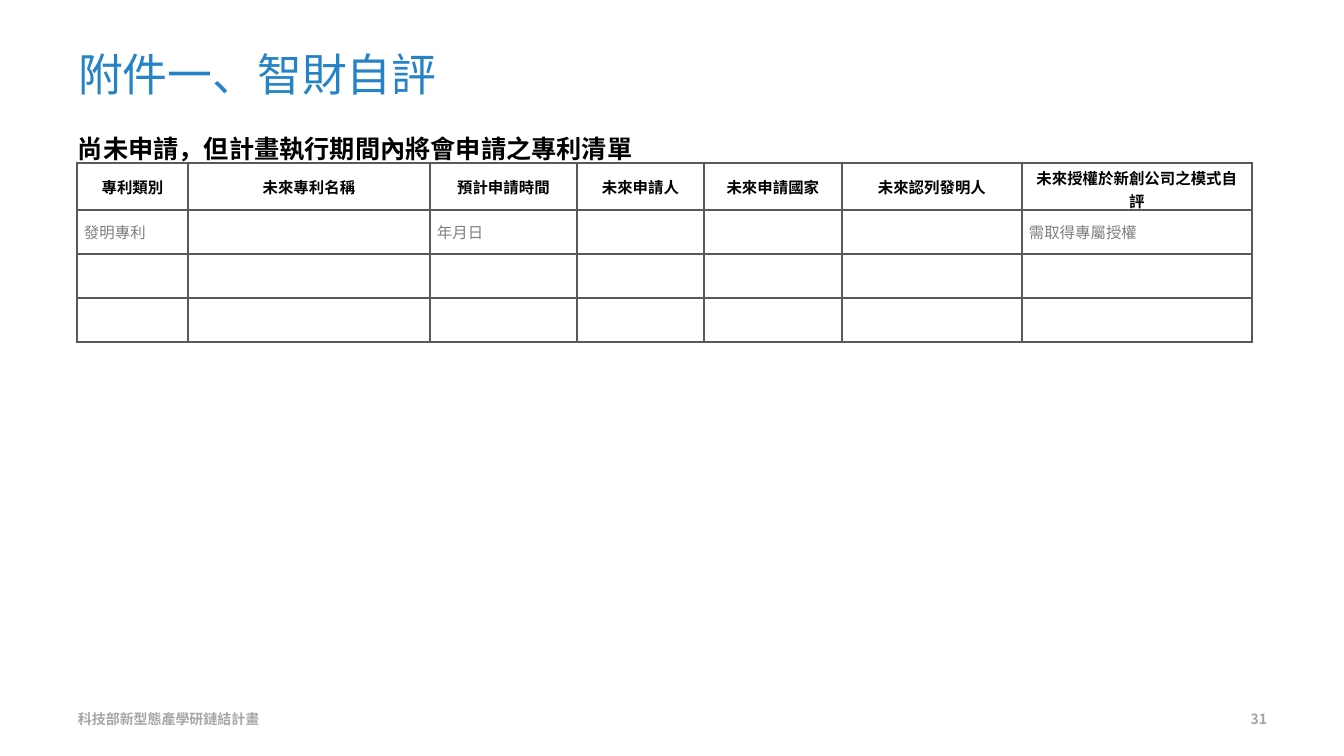
from lxml import etree
from pptx import Presentation, util as u
from pptx.dml.color import RGBColor
from pptx.enum import text
from pptx.oxml.ns import qn

FONT = "Noto Sans CJK SC"
BLUE, BLACK, GREY, PALE, RULE = "2683C6", "000000", "808080", "A6A6A6", "595959"
ALIGN = text.PP_ALIGN


def px(length):
    return u.Emu(round(length * 914400 / 100.8))


def write(frame, words, size, color, bold=False, align=ALIGN.LEFT):
    frame.word_wrap = True
    paragraph = frame.paragraphs[0]
    paragraph.alignment = align
    run = paragraph.add_run()
    run.text = words
    run.font.name = FONT
    run.font.size = u.Pt(size)
    run.font.bold = bold
    run.font.color.rgb = RGBColor.from_string(color)
    latin = run.font._element.find(qn("a:latin"))
    east_asian = etree.Element(qn("a:ea"), typeface=FONT)
    latin.addnext(east_asian)
    return paragraph


deck = Presentation()
deck.slide_width, deck.slide_height = px(1344), px(756)
slide = deck.slides.add_slide(deck.slide_layouts[5])

# Title
title = slide.shapes.title
title.left, title.top, title.width, title.height = px(68), px(30), px(1210), px(87)
title.text_frame.vertical_anchor = text.MSO_ANCHOR.MIDDLE
title.text_frame.auto_size = text.MSO_AUTO_SIZE.NONE
write(title.text_frame, "附件一、智財自評", 32, BLUE)

# Footer and page number
for left, words, align in [(68, "科技部新型態產學研鏈結計畫", ALIGN.LEFT),
                           (964, "31", ALIGN.RIGHT)]:
    footer = slide.shapes.add_textbox(px(left), px(699), px(313), px(40)).text_frame
    footer.vertical_anchor = text.MSO_ANCHOR.MIDDLE
    write(footer, words, 10, PALE, True, align)

# Patent table
headings = ["專利類別", "未來專利名稱", "預計申請時間", "未來申請人",
            "未來申請國家", "未來認列發明人", "未來授權於新創公司之模式自評"]
hints = ["發明專利", "", "年月日", "", "", "", "需取得專屬授權"]
patents = [headings, hints, [""] * 7, [""] * 7]
widths = [111, 242, 147, 127, 138, 180, 230]
heights = [47, 44, 44, 44]
last_row, last_col = len(heights) - 1, len(widths) - 1

table = slide.shapes.add_table(len(heights), len(widths), px(77), px(163),
                               px(sum(widths)), px(sum(heights))).table
table.first_row = table.horz_banding = False
for column, width in zip(table.columns, widths):
    column.width = px(width)
for row, height in zip(table.rows, heights):
    row.height = px(height)

for r, entries in enumerate(patents):
    for c, words in enumerate(entries):
        cell = table.cell(r, c)
        cell.vertical_anchor = text.MSO_ANCHOR.MIDDLE
        cell.margin_left = cell.margin_right = px(7)
        cell.margin_top = cell.margin_bottom = px(4)
        cell.fill.background()
        if not words:
            # An empty cell keeps the small text size, so its row does not grow
            etree.SubElement(cell.text_frame.paragraphs[0]._p,
                             qn("a:endParaRPr"), sz="1100")
        elif r == 0:
            write(cell.text_frame, words, 11, BLACK, True, ALIGN.CENTER)
        else:
            write(cell.text_frame, words, 11, GREY)

        # Thick outer frame, thin inner rules
        edges = [("L", c == 0), ("R", c == last_col), ("T", r == 0), ("B", r == last_row)]
        for position, (side, outer) in enumerate(edges):
            border = etree.Element(qn(f"a:ln{side}"), w=str(u.Pt(2.25 if outer else 1)))
            fill = etree.SubElement(border, qn("a:solidFill"))
            etree.SubElement(fill, qn("a:srgbClr"), val=RULE)
            cell._tc.tcPr.insert(position, border)

# Table heading
heading = slide.shapes.add_textbox(px(68), px(113), px(1184), px(50)).text_frame
write(heading, "尚未申請，但計畫執行期間內將會申請之專利清單", 18, BLACK, True,
      ALIGN.JUSTIFY).line_spacing = 1.5

deck.save("out.pptx")
